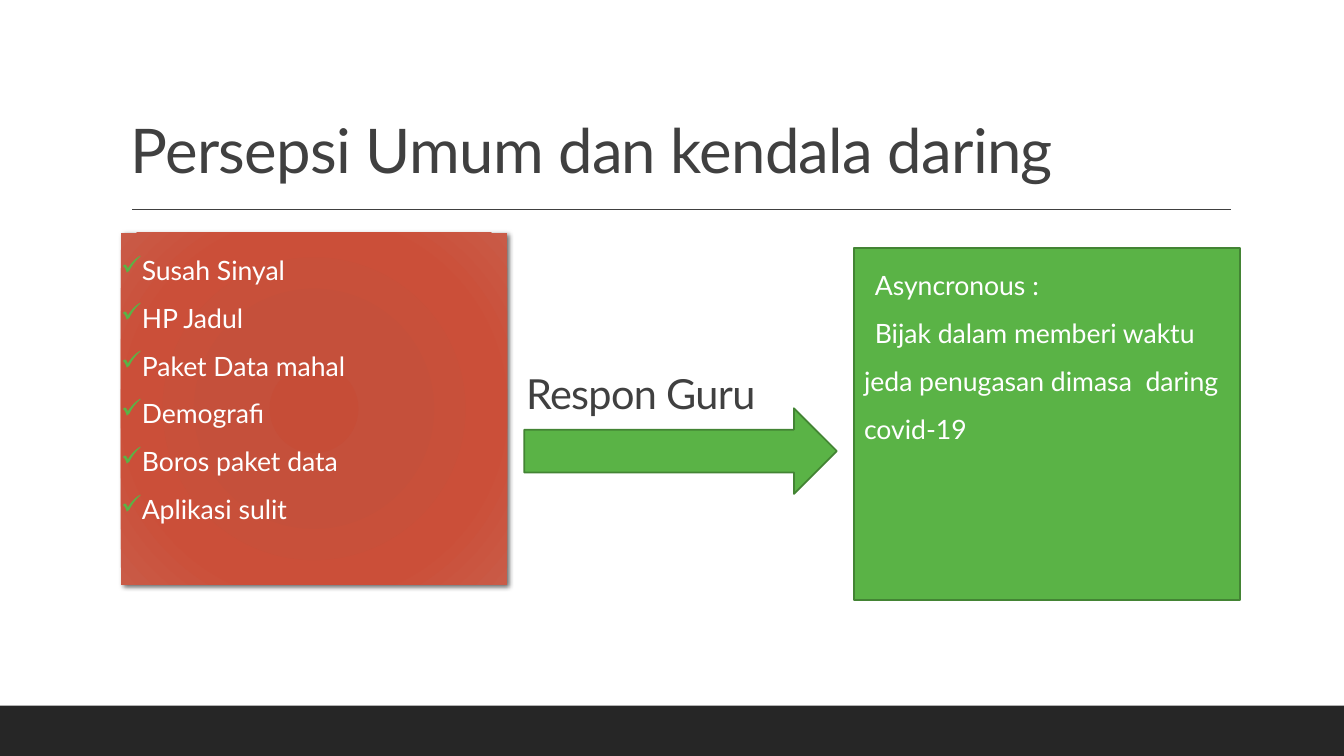
"""Build the slide on common perceptions and obstacles of online learning."""
from dataclasses import dataclass

from pptx import Presentation
from pptx.dml.color import RGBColor
from pptx.enum.shapes import MSO_CONNECTOR, MSO_SHAPE
from pptx.enum.text import MSO_ANCHOR, PP_ALIGN
from pptx.oxml import parse_xml
from pptx.oxml.ns import nsdecls, qn
from pptx.util import Inches, Pt


@dataclass(frozen=True)
class Theme:
    font: str = "Lato"
    text: str = "404040"
    light: str = "FFFFFF"
    footer: str = "262626"
    green: str = "5AB346"
    green_edge: str = "438434"
    reds: tuple = ((0, "C64D37"), (34, "C5503B"), (70, "CB4F39"), (100, "C95B47"))
    shadow: str = "000000"
    title_size: float = 44
    label_size: float = 29.6
    body_size: float = 19


theme = Theme()


def add_box(kind, x, y, w, h, fill, edge=None):
    sp = s.shapes.add_shape(kind, Inches(x), Inches(y), Inches(w), Inches(h))
    sp.shadow.inherit = False
    sp.fill.solid()
    sp.fill.fore_color.rgb = RGBColor.from_string(fill)
    if edge:
        sp.line.color.rgb = RGBColor.from_string(edge)
        sp.line.width = Pt(1.25)
    else:
        sp.line.fill.background()
    return sp


def add_run(p, text, size, color):
    r = p.add_run()
    r.text = text
    r.font.name = theme.font
    r.font.size = Pt(size)
    r.font.color.rgb = RGBColor.from_string(color)
    return r


prs = Presentation()
prs.slide_width = Inches(13.33)
prs.slide_height = Inches(7.5)
s = prs.slides.add_slide(prs.slide_layouts[6])

add_box(MSO_SHAPE.RECTANGLE, 0, 7, 13.33, 0.5, theme.footer)

rule = s.shapes.add_connector(
    MSO_CONNECTOR.STRAIGHT, Inches(1.31), Inches(2.08), Inches(12.21), Inches(2.08))
rule.line.color.rgb = RGBColor.from_string(theme.text)
rule.line.width = Pt(1)
rule._element.spPr.append(parse_xml(f"<a:effectLst {nsdecls('a')}/>"))

obstacles = add_box(MSO_SHAPE.RECTANGLE, 1.2, 2.31, 3.83, 3.49, theme.reds[0][1])
stops = "".join(
    f'<a:gs pos="{pos * 1000}"><a:srgbClr val="{color}"/></a:gs>'
    for pos, color in theme.reds)
spPr = obstacles._element.spPr
spPr.replace(spPr.find(qn("a:solidFill")), parse_xml(
    f'<a:gradFill {nsdecls("a")} rotWithShape="1"><a:gsLst>{stops}</a:gsLst>'
    '<a:path path="circle">'
    '<a:fillToRect l="100000" t="100000" r="100000" b="100000"/>'
    '</a:path></a:gradFill>'))
spPr.find(qn("a:effectLst")).append(parse_xml(
    f'<a:outerShdw {nsdecls("a")} blurRad="{Pt(3.5)}" dist="{Pt(2)}" dir="2700000" '
    f'algn="tl" rotWithShape="0"><a:srgbClr val="{theme.shadow}">'
    '<a:alpha val="60000"/></a:srgbClr></a:outerShdw>'))

response = add_box(
    MSO_SHAPE.RECTANGLE, 8.47, 2.46, 3.83, 3.49, theme.green, theme.green_edge)
add_box(MSO_SHAPE.RIGHT_ARROW, 5.2, 4.05, 3.1, 0.85, theme.green, theme.green_edge)

checklists = (
    (obstacles, ("Susah Sinyal", "HP Jadul", "Paket Data mahal", "Demografi",
                 "Boros paket data", "Aplikasi sulit")),
    (response, ("Asyncronous :",
                "Bijak dalam memberi waktu jeda penugasan dimasa  daring covid-19")),
)
for sp, items in checklists:
    tf = sp.text_frame
    tf.word_wrap = True
    tf.vertical_anchor = MSO_ANCHOR.TOP
    tf.margin_left = tf.margin_right = 0
    for i, item in enumerate(items):
        p = tf.add_paragraph() if i else tf.paragraphs[0]
        p.alignment = PP_ALIGN.LEFT
        p.line_spacing = 1.5
        pPr = p._p.get_or_add_pPr()
        pPr.set("marL", str(Inches(0.1)))
        pPr.set("indent", str(-Inches(0.1)))
        pPr.append(parse_xml(
            f'<a:buClr {nsdecls("a")}><a:srgbClr val="{theme.green}"/></a:buClr>'))
        pPr.append(parse_xml(f'<a:buChar {nsdecls("a")} char="✓"/>'))
        add_run(p, item, theme.body_size, theme.light)

headings = (
    ("Persepsi Umum dan kendala daring", 1.2, 0.31, 11, 1.59, theme.title_size),
    ("Respon Guru", 5.12, 3.62, 2.77, 0.58, theme.label_size),
)
for text, x, y, w, h, size in headings:
    tf = s.shapes.add_textbox(Inches(x), Inches(y), Inches(w), Inches(h)).text_frame
    tf.word_wrap = True
    tf.vertical_anchor = MSO_ANCHOR.BOTTOM
    p = tf.paragraphs[0]
    p.line_spacing = 0.9
    r = add_run(p, text, size, theme.text)
    r._r.get_or_add_rPr().set("spc", "-50")

prs.save("out.pptx")
